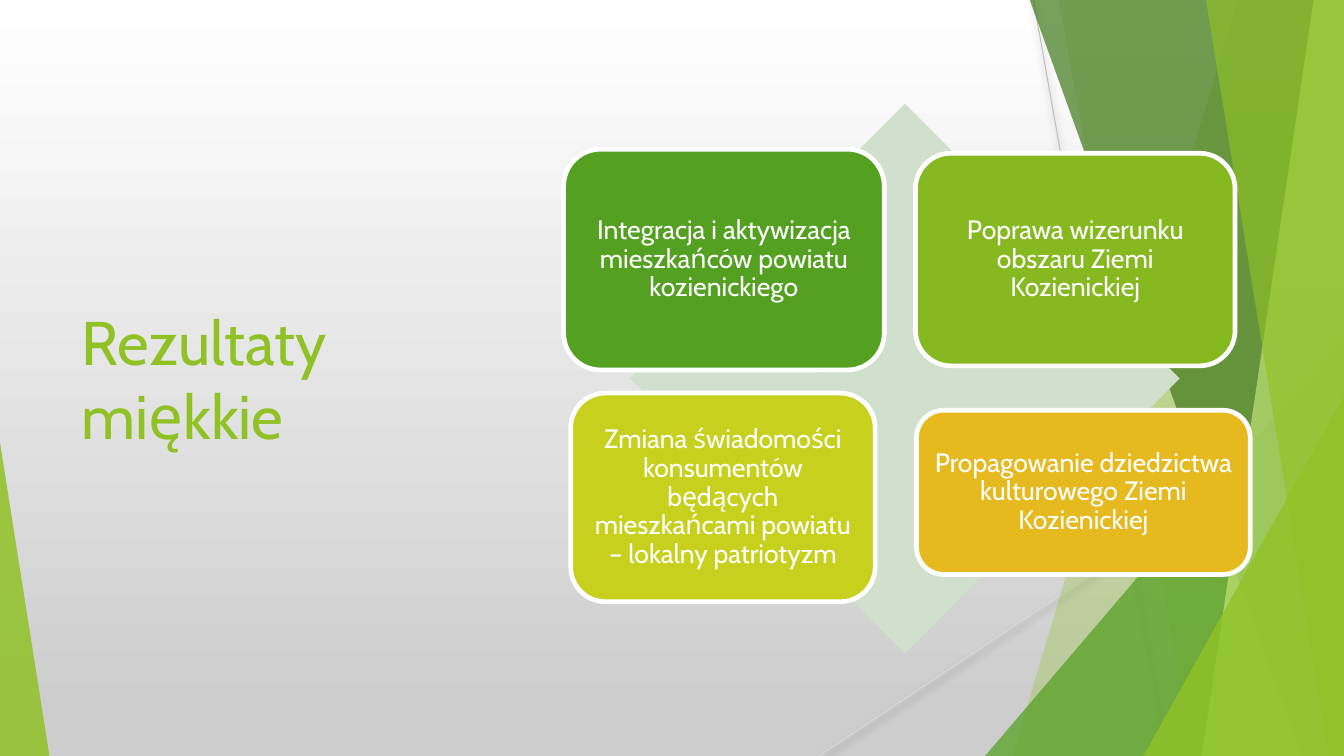
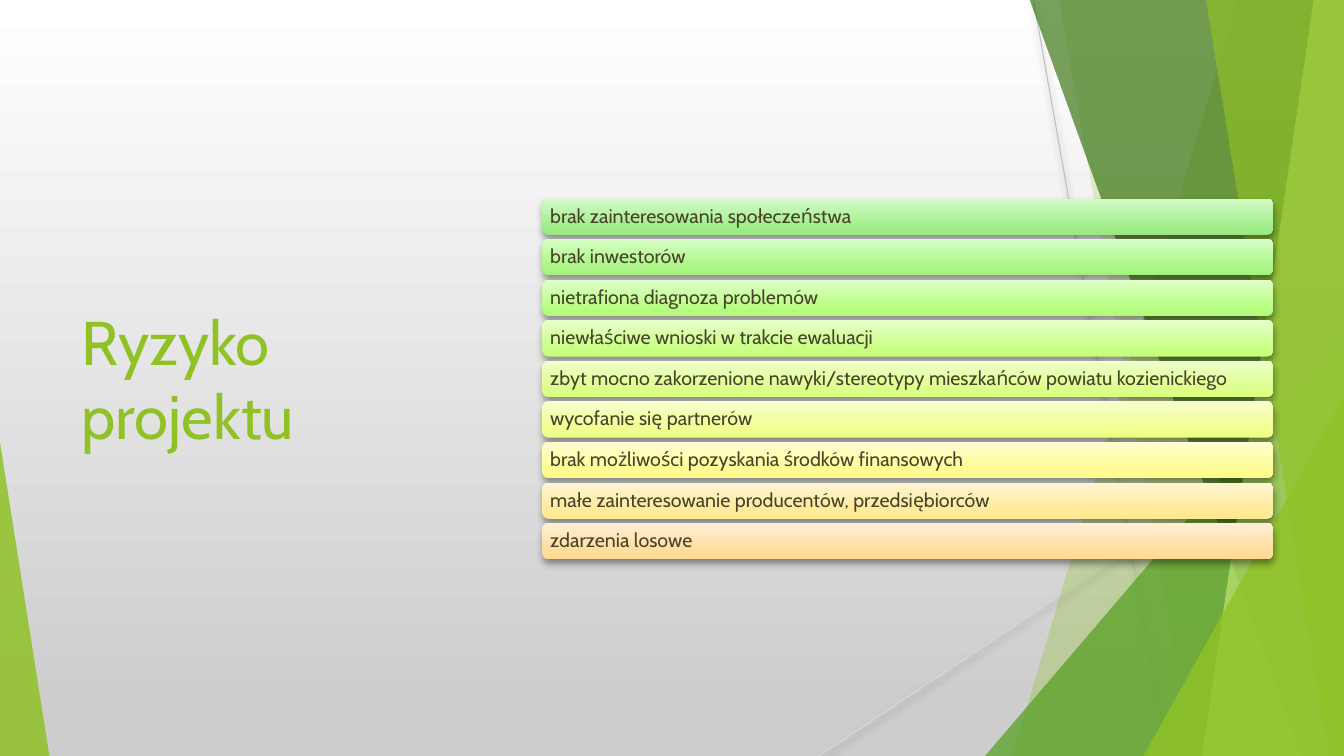
"""Build two slides on project results and risks over a shared green backdrop."""
from copy import deepcopy
from dataclasses import dataclass

from pptx import Presentation, util as u
from pptx.dml.color import RGBColor
from pptx.enum import shapes, text
from pptx.oxml import parse_xml
from pptx.oxml.ns import nsdecls, qn

FONT = "Cabin"
LIME, GREEN, WHITE, INK = "90C226", "54A021", "FFFFFF", "48432A"
WIDTH, HEIGHT = 13.33, 7.5
TOP = -0.01
BAR_LEFT, BAR_WIDTH, BAR_HEIGHT = 5.38, 7.25, 0.36
FIRST_BAR, LAST_BAR = 1.97, 5.19


@dataclass(frozen=True)
class Ray:
    """Thin line between two points."""
    start: tuple[float, float]
    end: tuple[float, float]
    color: str


@dataclass(frozen=True)
class Band:
    """Full-height band from its left edge to the right side of the slide."""
    top_x: float
    bottom_x: float
    color: str
    opacity: int


@dataclass(frozen=True)
class Wedge:
    """Right-angled triangle standing on the bottom of the slide."""
    left: float
    width: float
    height: float
    apex: float
    color: str
    opacity: int


@dataclass(frozen=True)
class Card:
    """Rounded card with one soft result."""
    left: float
    top: float
    width: float
    height: float
    color: str
    result: str


@dataclass(frozen=True)
class Risk:
    """One risk and its gradient from bottom to top."""
    label: str
    colors: tuple[str, str, str]


RAYS = (
    Ray((10.25, 0), (11.58, HEIGHT), "BFBFBF"),
    Ray((WIDTH, 4.03), (8.12, HEIGHT), "D9D9D9"),
)
FACETS = (
    Band(12.28, 10.04, LIME, 30),
    Band(10.5, 11.83, LIME, 20),
    Wedge(9.77, 3.56, 4.17, 1, GREEN, 72),
    Band(10.21, 12.91, "3F7819", 70),
    Band(13.03, 11.92, "C0E474", 70),
    Band(11.96, 13.18, LIME, 65),
    Wedge(11.34, 1.99, 3.57, 1, LIME, 80),
    Wedge(0, 0.49, 3.11, 0, LIME, 85),
)
CARDS = (
    Card(5.59, 1.48, 3.18, 2.19, GREEN, "Integracja i aktywizacja mieszkańców powiatu kozienickiego"),
    Card(9.08, 1.52, 3.17, 2.11, "86B820", "Poprawa wizerunku obszaru Ziemi Kozienickiej"),
    Card(5.66, 3.9, 3.02, 2.07, "C7D01D",
         "Zmiana świadomości konsumentów będących mieszkańcami powiatu – lokalny patriotyzm"),
    Card(9.09, 4.07, 3.31, 1.63, "E6B91E", "Propagowanie dziedzictwa kulturowego Ziemi Kozienickiej"),
)
RISKS = (
    Risk("brak zainteresowania społeczeństwa", ("9AE883", "A2EE8B", "D4FBC9")),
    Risk("brak inwestorów", ("A4F07F", "ABF687", "D8FFC7")),
    Risk("nietrafiona diagnoza problemów", ("B2F87B", "B8FE83", "DFFFC9")),
    Risk("niewłaściwe wnioski w trakcie ewaluacji", ("C5FF79", "CAFF86", "E7FFCB")),
    Risk("zbyt mocno zakorzenione nawyki/stereotypy mieszkańców powiatu kozienickiego",
         ("DAFF7E", "DDFF8B", "EFFFCD")),
    Risk("wycofanie się partnerów", ("EEFF84", "F0FF90", "F8FFCF")),
    Risk("brak możliwości pozyskania środków finansowych", ("FFFB89", "FFFC95", "FFFDD1")),
    Risk("małe zainteresowanie producentów, przedsiębiorców", ("FFE98F", "FFEB9A", "FFF5D4")),
    Risk("zdarzenia losowe", ("FFDA93", "FFDD9D", "FFEFD5")),
)


def rgb(value: str) -> RGBColor:
    """Turn a hex string into a colour."""
    return RGBColor.from_string(value)


def write(shape, wording: str, *, size: float, color: str, inset: float = 0.1,
          align=text.PP_ALIGN.LEFT, spacing: float = 1.0) -> None:
    """Put formatted, vertically centred text in a shape."""
    frame = shape.text_frame
    frame.word_wrap = True
    frame.auto_size = text.MSO_AUTO_SIZE.NONE
    frame.vertical_anchor = text.MSO_ANCHOR.MIDDLE
    frame.margin_left = frame.margin_right = u.Inches(inset)
    frame.margin_top = frame.margin_bottom = u.Inches(inset)
    frame.text = wording
    paragraph = frame.paragraphs[0]
    paragraph.alignment = align
    paragraph.line_spacing = spacing
    font = paragraph.runs[0].font
    font.name, font.size, font.color.rgb = FONT, u.Pt(size), rgb(color)


def fill_gradient(fill, element, stops: list[tuple[float, str]], angle: float) -> None:
    """Fill with a linear gradient, its angle counted counter-clockwise."""
    fill.gradient()
    fill.gradient_angle = angle
    stop_list = next(element.iter(qn("a:gsLst")))
    while len(stop_list) < len(stops):
        stop_list.append(deepcopy(stop_list[0]))
    for stop, (position, color) in zip(fill.gradient_stops, stops):
        stop.position, stop.color.rgb = position, rgb(color)


def cast_shadow(shape) -> None:
    """Give a finished shape or line a soft shadow below it."""
    shape.element.spPr.append(parse_xml(
        f'<a:effectLst {nsdecls("a")}>'
        f'<a:outerShdw blurRad="{u.Pt(5.2)}" dist="{u.Pt(3)}" dir="5400000" rotWithShape="0">'
        '<a:srgbClr val="000000"><a:alpha val="40000"/></a:srgbClr>'
        '</a:outerShdw></a:effectLst>'))


def add_preset(slide, kind, left: float, top: float, width: float, height: float):
    """Add a preset shape without outline."""
    shape = slide.shapes.add_shape(
        kind, u.Inches(left), u.Inches(top), u.Inches(width), u.Inches(height))
    shape.line.fill.background()
    return shape


def paint(shape, color: str, opacity: int = 100) -> None:
    """Fill a shape with one colour and drop its shadow."""
    shape.shadow.inherit = False
    shape.fill.solid()
    shape.fill.fore_color.rgb = rgb(color)
    if opacity < 100:
        tint = next(shape.element.iter(qn("a:srgbClr")))
        tint.append(parse_xml(f'<a:alpha {nsdecls("a")} val="{opacity * 1000}"/>'))


def add_ray(slide, ray: Ray):
    """Draw a shadowed thin line."""
    line = slide.shapes.add_connector(
        shapes.MSO_CONNECTOR.STRAIGHT, *(u.Inches(value) for value in ray.start + ray.end))
    line.line.color.rgb = rgb(ray.color)
    line.line.width = u.Pt(0.75)
    cast_shadow(line)
    return line


def add_facet(slide, facet: Band | Wedge):
    """Draw a translucent band or wedge."""
    if isinstance(facet, Wedge):
        shape = add_preset(slide, shapes.MSO_SHAPE.ISOSCELES_TRIANGLE, facet.left,
                           HEIGHT - facet.height, facet.width, facet.height)
        shape.adjustments[0] = facet.apex
    else:
        start, *corners = [(u.Inches(x), u.Inches(y)) for x, y in (
            (facet.top_x, TOP), (WIDTH, TOP), (WIDTH, HEIGHT), (facet.bottom_x, HEIGHT))]
        builder = slide.shapes.build_freeform(*start)
        builder.add_line_segments(corners, close=True)
        shape = builder.convert_to_shape()
        shape.line.fill.background()
    paint(shape, facet.color, facet.opacity)
    return shape


def dress_layout(slide) -> None:
    """Draw the backdrop once and move it to the layout of the slide."""
    layout = slide.slide_layout
    fill_gradient(layout.background.fill, layout.element, [(0, WHITE), (0.94, "CDCDCD")], 270)
    for placeholder in list(layout.placeholders)[1:]:
        layout.shapes.element.remove(placeholder.element)
    backdrop = [add_ray(slide, ray) for ray in RAYS]
    backdrop += [add_facet(slide, facet) for facet in FACETS]
    for part in backdrop:
        layout.shapes.element.insert_element_before(part.element, "p:extLst")


def add_titled_slide(deck, heading: str):
    """Add a slide with its title on the left."""
    slide = deck.slides.add_slide(deck.slide_layouts[5])
    title = slide.shapes.title
    title.left, title.top = u.Inches(0.71), u.Inches(1.51)
    title.width, title.height = u.Inches(3.88), u.Inches(4.48)
    write(title, heading, size=44, color=LIME)
    return slide


def add_card(slide, card: Card) -> None:
    """Draw a white-edged result card."""
    box = add_preset(slide, shapes.MSO_SHAPE.ROUNDED_RECTANGLE,
                     card.left, card.top, card.width, card.height)
    paint(box, card.color)
    box.line.color.rgb = rgb(WHITE)
    box.line.width = u.Pt(3.35)
    write(box, card.result, size=19, color=WHITE, inset=0.08,
          align=text.PP_ALIGN.CENTER, spacing=0.9)


def add_risk(slide, risk: Risk, top: float) -> None:
    """Draw a shadowed gradient bar with one risk."""
    bar = add_preset(slide, shapes.MSO_SHAPE.ROUNDED_RECTANGLE,
                     BAR_LEFT, top, BAR_WIDTH, BAR_HEIGHT)
    fill_gradient(bar.fill, bar.element, list(zip((0, 0.25, 1), risk.colors)), 90)
    cast_shadow(bar)
    write(bar, risk.label, size=14, color=INK, inset=0.06, spacing=0.9)


def main() -> None:
    """Build and save the deck."""
    deck = Presentation()
    deck.slide_width, deck.slide_height = u.Inches(WIDTH), u.Inches(HEIGHT)

    results = add_titled_slide(deck, "Rezultaty miękkie")
    dress_layout(results)
    diamond = add_preset(results, shapes.MSO_SHAPE.DIAMOND, 6.25, 1.03, 5.45, 5.45)
    paint(diamond, "D1DFCD")
    for card in CARDS:
        add_card(results, card)

    risks = add_titled_slide(deck, "Ryzyko projektu")
    pitch = (LAST_BAR - FIRST_BAR) / (len(RISKS) - 1)
    for row, risk in enumerate(RISKS):
        add_risk(risks, risk, FIRST_BAR + row * pitch)

    deck.save("out.pptx")


if __name__ == "__main__":
    main()
